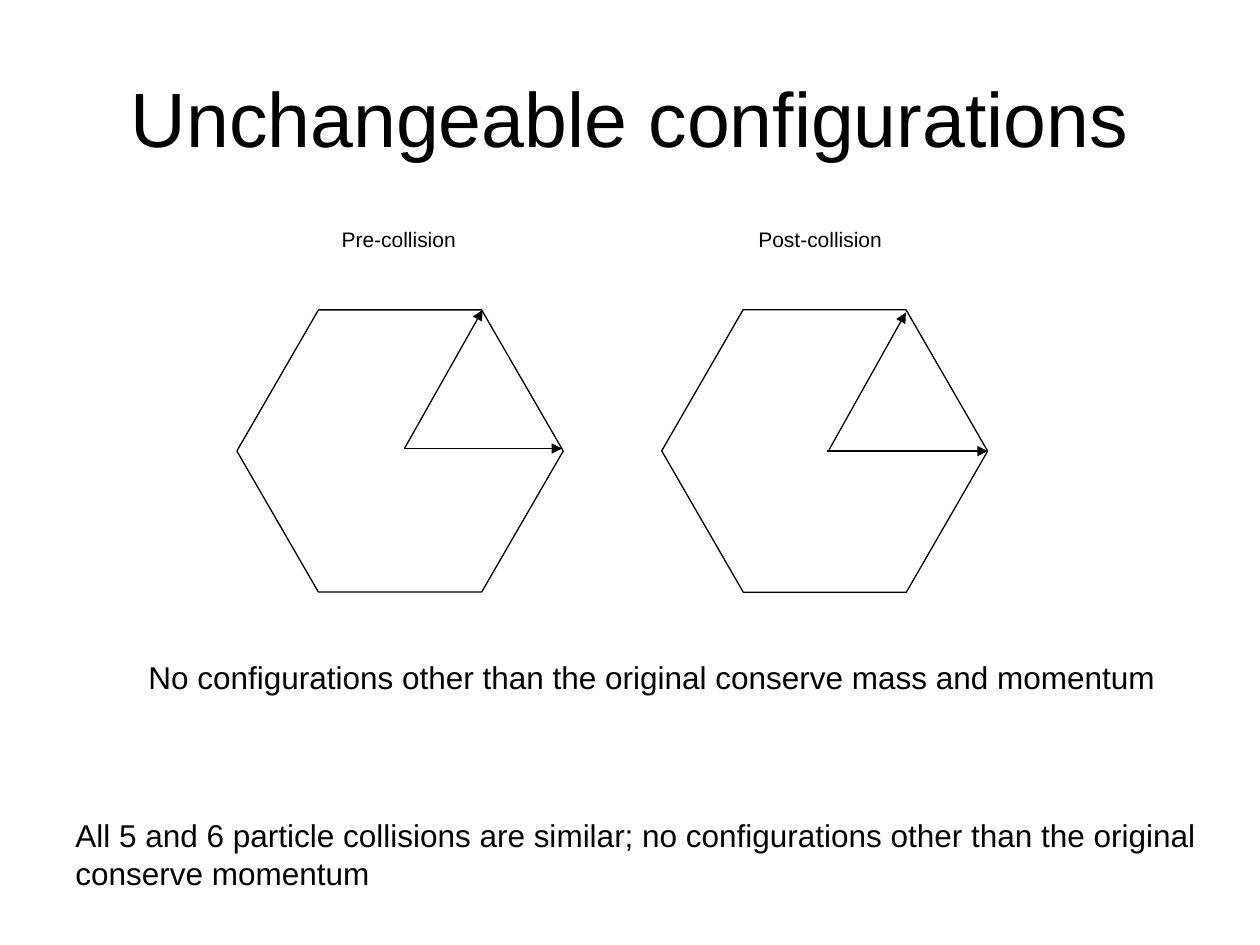
"""Build the slide on unchangeable collision configurations."""
from lxml import etree
from pptx import Presentation
from pptx.dml.color import RGBColor
from pptx.enum.shapes import MSO_CONNECTOR, MSO_SHAPE
from pptx.enum.text import MSO_ANCHOR, PP_ALIGN
from pptx.oxml.ns import qn
from pptx.util import Inches, Pt

HEX, RECT = MSO_SHAPE.HEXAGON, MSO_SHAPE.RECTANGLE
LINE = MSO_CONNECTOR.STRAIGHT
TOP, MID = MSO_ANCHOR.TOP, MSO_ANCHOR.MIDDLE
LEFT, CENTER = PP_ALIGN.LEFT, PP_ALIGN.CENTER
COLORS = {"ink": "000000", "paper": "FFFFFF"}
FONT = "Arial"

TITLE = "Unchangeable configurations"
HEX_TOP, HEX_W, HEX_H = 2.46, 2.59, 2.24
STATES = [
    {"label": "Pre-collision", "box": (1.88, 1.75, 2.57, 0.53), "left": 1.88, "turn": 0,
     "moves": [((3.21, 3.56), (3.83, 2.46)), ((3.21, 3.56), (4.46, 3.56))]},
    {"label": "Post-collision", "box": (5.36, 1.75, 2.3, 0.61), "left": 5.25, "turn": 60,
     "moves": [((6.58, 3.57), (7.19, 2.48)), ((6.56, 3.58), (7.84, 3.58))]},
]
NOTES = [
    ((0.5, 6.43, 9.16, 0.7),
     ["All 5 and 6 particle collisions are similar; no configurations other than the original",
      "conserve momentum"]),
    ((1.08, 5.17, 8.26, 0.4),
     ["No configurations other than the original conserve mass and momentum"]),
]


def color(name):
    return RGBColor.from_string(COLORS[name])


def inches(*vals):
    return [Inches(v) for v in vals]


def write(shape, lines, size, align, anchor):
    frame = shape.text_frame
    frame.text = "\n".join(lines)
    frame.vertical_anchor = anchor
    for para in frame.paragraphs:
        para.alignment = align
        para.font.size, para.font.name = Pt(size), FONT
        para.font.color.rgb = color("ink")
    return frame


def ink(line):
    line.color.rgb = color("ink")
    line.width = Pt(0.75)


def block(shapes, kind, box):
    shape = shapes.add_shape(kind, *inches(*box))
    shape.shadow.inherit = False
    shape.fill.solid()
    shape.fill.fore_color.rgb = color("paper")
    return shape


def arrow(shapes, start, end):
    link = shapes.add_connector(LINE, *inches(*start, *end))
    ink(link.line)
    props = link.element.spPr
    etree.SubElement(props.find(qn("a:ln")), qn("a:tailEnd"), type="triangle")
    etree.SubElement(props, qn("a:effectLst"))


def main():
    deck = Presentation()
    deck.slide_width, deck.slide_height = inches(10, 7.5)
    shapes = deck.slides.add_slide(deck.slide_layouts[5]).shapes
    title = shapes.title
    title.left, title.top, title.width, title.height = inches(0.5, 0.3, 9, 1.25)
    write(title, [TITLE], 44, CENTER, MID)

    for state in STATES:
        cell = block(shapes, HEX, (state["left"], HEX_TOP, HEX_W, HEX_H))
        cell.adjustments[0] = 0.289
        cell.rotation = state["turn"]
        ink(cell.line)
        for start, end in state["moves"]:
            arrow(shapes, start, end)

    for state in STATES:
        label = block(shapes, RECT, state["box"])
        label.line.fill.background()
        write(label, [state["label"]], 12, CENTER, TOP)

    for box, lines in NOTES:
        note = shapes.add_textbox(*inches(*box))
        write(note, lines, 18, LEFT, MID).word_wrap = False

    deck.save("out.pptx")


if __name__ == "__main__":
    main()
